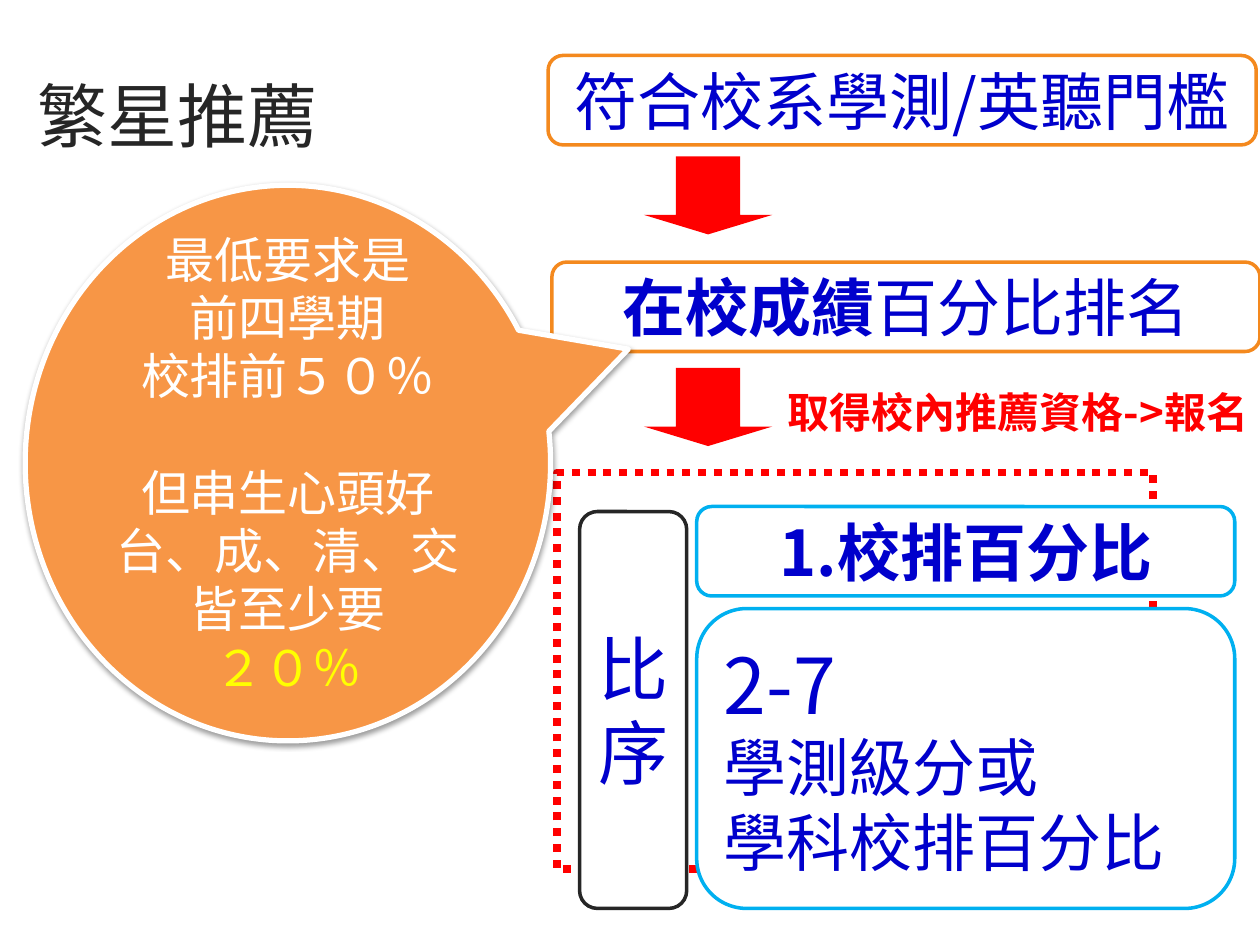
from lxml import etree
from pptx import Presentation, util as u
from pptx.dml.color import RGBColor
from pptx.enum import dml, shapes, text
from pptx.oxml import parse_xml
from pptx.oxml.ns import nsdecls, qn

JP, SC = "Noto Sans CJK JP", "Noto Sans CJK SC"
BLUE, RED, ORANGE, CYAN = "0000CC", "FF0000", "F4891E", "00B0F0"
WHITE, DARK = "FFFFFF", "262626"
PITCH = 1.19  # line height relative to the font size
MSO = shapes.MSO_SHAPE


def color(value):
    return RGBColor.from_string(value)


class Deck:
    def __init__(self):
        self.prs = Presentation()
        self.prs.slide_width, self.prs.slide_height = u.Inches(10), u.Inches(7.5)
        self.s = self.prs.slides.add_slide(self.prs.slide_layouts[6])

    def shape(self, kind, at, fill=None, line=None, width=2):
        sp = self.s.shapes.add_shape(kind, *map(u.Inches, at))
        sp.shadow.inherit = False
        if fill:
            sp.fill.solid()
            sp.fill.fore_color.rgb = color(fill)
        else:
            sp.fill.background()
        if line:
            sp.line.color.rgb = color(line)
            sp.line.width = u.Pt(width)
        else:
            sp.line.fill.background()
        return sp

    def set_text(self, sp, lines, size, fill, font=SC, bold=False,
                 align=text.PP_ALIGN.CENTER, wrap=False):
        tf = sp.text_frame
        tf.text = "\n".join(lines)
        tf.word_wrap = wrap
        tf.vertical_anchor = text.MSO_ANCHOR.MIDDLE
        for p in tf.paragraphs:
            p.alignment = align
            for r in p.runs:
                self.style(r, size, fill, font, bold)
            self.pitch(p, size)
        return tf

    def pitch(self, p, size):
        p.line_spacing = u.Pt(round(size * PITCH, 1))

    def style(self, r, size, fill, font, bold):
        r.font.size, r.font.bold, r.font.name = u.Pt(size), bold, font
        r.font.color.rgb = color(fill)
        etree.SubElement(r.font._element, qn("a:ea")).set("typeface", font)

    def title(self, at, words):
        sp = self.s.shapes.add_textbox(*map(u.Inches, at))
        self.set_text(sp, [words], 40, DARK, JP, align=text.PP_ALIGN.LEFT, wrap=True)

    def box(self, at, lines, line, size=36, **style):
        sp = self.shape(MSO.ROUNDED_RECTANGLE, at, WHITE, line)
        return self.set_text(sp, lines, size, BLUE, **style)

    def label(self, at, words):
        sp = self.shape(MSO.ROUNDED_RECTANGLE, at)
        self.set_text(sp, [words], 24, RED, JP, bold=True)

    def arrow(self, top):
        sp = self.shape(MSO.DOWN_ARROW, (5.11, top, 1.02, 0.62), RED)
        sp.adjustments[1] = 0.25

    def dotted_frame(self, at):
        sp = self.shape(MSO.RECTANGLE, at, line=RED, width=4.5)
        sp.line.dash_style = dml.MSO_LINE.ROUND_DOT

    def callout(self, at, tip, lines):
        sp = self.shape(MSO.OVAL_CALLOUT, at, "F79646", WHITE, 3)
        sp.adjustments[0], sp.adjustments[1] = tip
        self.drop_shadow(sp)
        tf = self.set_text(sp, lines, 28, WHITE, JP, wrap=True)
        tf.margin_left = tf.margin_right = u.Inches(0.05)
        return tf

    def drop_shadow(self, sp):
        effects = sp._element.spPr.find(qn("a:effectLst"))
        effects.append(parse_xml(
            f'<a:outerShdw {nsdecls("a")} blurRad="{u.Pt(3.1)}" dist="{u.Pt(1.6)}" '
            'dir="5400000" rotWithShape="0"><a:srgbClr val="000000">'
            '<a:alpha val="38000"/></a:srgbClr></a:outerShdw>'))


def main():
    d = Deck()
    d.title((0.2, 0.29, 4.09, 1.25), "繁星推薦")
    d.dotted_frame((4.42, 3.75, 4.73, 3.15))

    d.box((4.35, 0.44, 5.62, 0.71), ["符合校系學測/英聽門檻"], ORANGE)
    for top in (1.24, 2.92):
        d.arrow(top)
    d.label((7.13, 2.87, 1.9, 0.8), "取得校內推薦資格->報名")
    ranking = d.box((4.38, 2.08, 5.62, 0.71), ["在校成績"], ORANGE, bold=True)
    r = ranking.paragraphs[0].add_run()
    r.text = "百分比排名"
    d.style(r, 36, BLUE, SC, False)

    d.box((5.53, 4.02, 4.27, 0.71), ["1.校排百分比"], CYAN, bold=True)
    d.box((4.6, 4.06, 0.85, 3.15), ["比", "序"], DARK, size=40)
    criteria = d.box((5.53, 4.83, 4.27, 2.38), ["2-7", "學測級分或", "學科校排百分比"],
                     CYAN, align=text.PP_ALIGN.LEFT, wrap=True)
    first = criteria.paragraphs[0]
    first.runs[0].font.size = u.Pt(44)
    d.pitch(first, 44)

    note = d.callout((0.2, 1.47, 4.17, 4.41), (0.648, -0.205), [
        "最低要求是", "前四學期", "校排前５０％",
        "但串生心頭好", "台、成、清、交", "皆至少要", "２０％"])
    note.paragraphs[3].space_before = u.Pt(33.3)
    note.paragraphs[-1].runs[0].font.color.rgb = color("FFFF00")

    d.prs.save("out.pptx")


if __name__ == "__main__":
    main()
